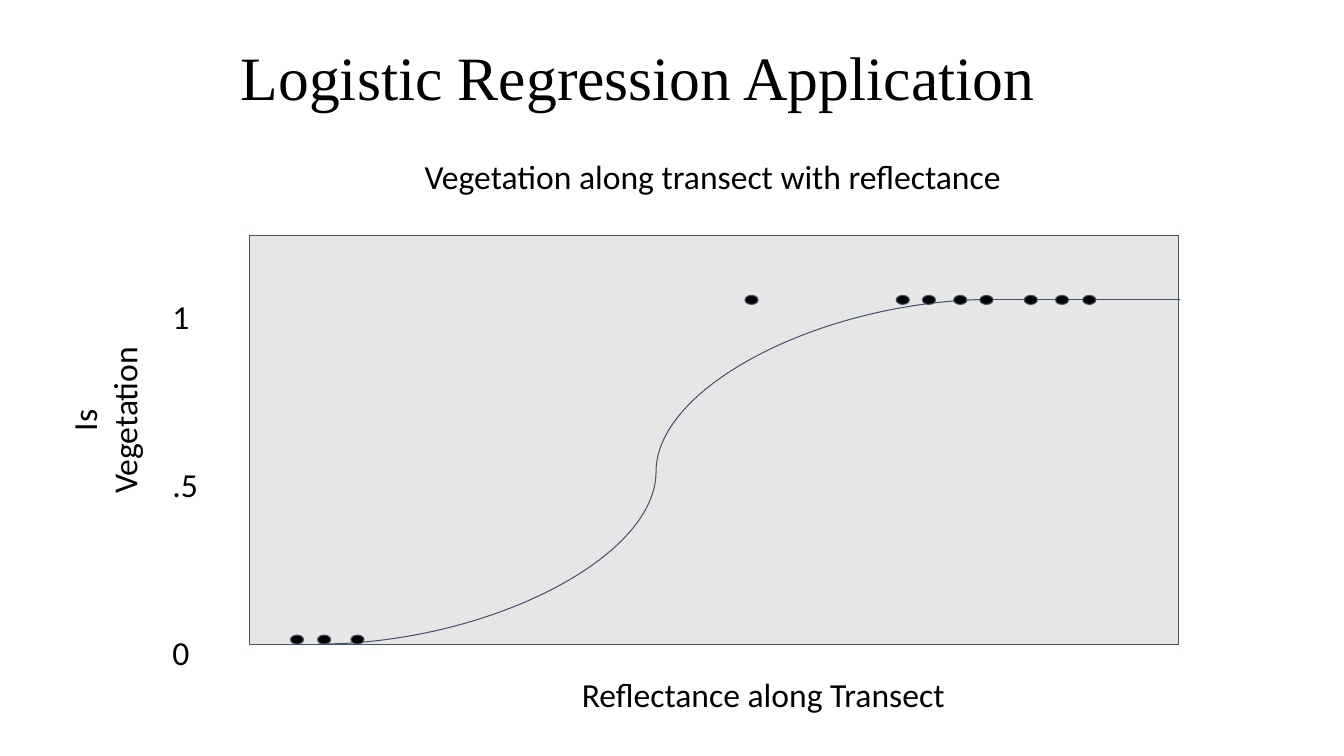
from dataclasses import dataclass

from lxml import etree
from pptx import Presentation
from pptx.dml.color import RGBColor
from pptx.enum.shapes import MSO_CONNECTOR, MSO_SHAPE
from pptx.enum.text import MSO_ANCHOR, MSO_AUTO_SIZE, PP_ALIGN
from pptx.oxml.ns import qn
from pptx.util import Inches, Pt

RECTANGLE, OVAL = MSO_SHAPE.RECTANGLE, MSO_SHAPE.OVAL
STRAIGHT, CURVE = MSO_CONNECTOR.STRAIGHT, MSO_CONNECTOR.CURVE
LEFT, CENTER = PP_ALIGN.LEFT, PP_ALIGN.CENTER
TOP = MSO_ANCHOR.TOP
GROW = MSO_AUTO_SIZE.SHAPE_TO_FIT_TEXT


@dataclass(frozen=True)
class Theme:
    ink: RGBColor = RGBColor(0x00, 0x00, 0x00)
    panel: RGBColor = RGBColor(0xE7, 0xE6, 0xE6)
    outline: RGBColor = RGBColor(0x44, 0x54, 0x6A)
    line_width: float = 0.75
    title_font: str = "Times New Roman"
    title_size: int = 44
    label_font: str = "Calibri"
    label_size: int = 24
    label_inset: float = 0.13


class SlideBuilder:
    """Draws on one slide; all positions are percentages of its size."""

    def __init__(self, deck, theme):
        self.width, self.height = deck.slide_width, deck.slide_height
        self.theme = theme
        self.shapes = deck.slides.add_slide(deck.slide_layouts[6]).shapes

    def across(self, percent):
        return round(self.width * percent / 100)

    def down(self, percent):
        return round(self.height * percent / 100)

    def box(self, left, top, width, height):
        return (self.across(left), self.down(top),
                self.across(width), self.down(height))

    def outline(self, line):
        line.color.rgb = self.theme.outline
        line.width = Pt(self.theme.line_width)

    def shape(self, kind, area, fill):
        drawn = self.shapes.add_shape(kind, *self.box(*area))
        drawn.shadow.inherit = False
        drawn.fill.solid()
        drawn.fill.fore_color.rgb = fill
        self.outline(drawn.line)

    def dot(self, x, y, width=0.98, height=1.2):
        self.shape(OVAL, (x - width / 2, y - height / 2, width, height),
                   self.theme.ink)

    def connector(self, kind, start, end):
        drawn = self.shapes.add_connector(
            kind, self.across(start[0]), self.down(start[1]),
            self.across(end[0]), self.down(end[1]))
        self.outline(drawn.line)
        etree.SubElement(drawn._element.spPr, qn("a:effectLst"))

    def text(self, wording, area, font, size, align):
        drawn = self.shapes.add_textbox(*self.box(*area))
        frame = drawn.text_frame
        frame.word_wrap = True
        frame.vertical_anchor = TOP
        frame.text = wording
        paragraph = frame.paragraphs[0]
        paragraph.alignment = align
        style = paragraph.runs[0].font
        style.name, style.size = font, Pt(size)
        style.color.rgb = self.theme.ink
        return drawn

    def title(self, wording, area):
        drawn = self.text(wording, area, self.theme.title_font,
                          self.theme.title_size, CENTER)
        drawn.text_frame.auto_size = GROW

    def label(self, wording, area, align=CENTER, rotation=0):
        drawn = self.text(wording, area, self.theme.label_font,
                          self.theme.label_size, align)
        drawn.rotation = rotation
        frame = drawn.text_frame
        frame.margin_left = frame.margin_right = Inches(self.theme.label_inset)
        frame.margin_top = frame.margin_bottom = Inches(self.theme.label_inset)


def main():
    deck = Presentation()
    deck.slide_width, deck.slide_height = Inches(13.33), Inches(7.5)
    theme = Theme()
    slide = SlideBuilder(deck, theme)

    # Plot panel
    slide.shape(RECTANGLE, (18.53, 31.2, 69.15, 54), theme.panel)

    # Logistic curve and its plateau
    zero_level, one_level = 85.2, 39.6
    curve_end = (74, one_level)
    slide.connector(CURVE, (23.63, zero_level), curve_end)
    slide.connector(STRAIGHT, curve_end, (87.8, one_level))

    # Observations: bare ground, then vegetation
    observations = {
        84.6: (22.1, 24.12, 26.6),
        39.67: (55.92, 67.17, 69.12, 71.45, 73.4, 76.7, 79.02, 81.05),
    }
    for level, reflectances in observations.items():
        for reflectance in reflectances:
            slide.dot(reflectance, level)

    # Axis titles
    slide.label("Reflectance along Transect", (40, 87.47, 33.6, 9.2))
    slide.label("Is Vegetation", (0.9, 48.13, 14.1, 14.93), rotation=270)

    # Vertical axis values
    first_tick, tick_step = 37.47, 22.2
    for row, (value, width) in enumerate((("1", 4.2), (".5", 5.78), ("0", 4.2))):
        slide.label(value, (11.85, first_tick + row * tick_step, width, 5.6),
                    align=LEFT)

    # Headings
    slide.label("Vegetation along transect with reflectance",
                (27, 18.93, 52.06, 11.2))
    slide.title("Logistic Regression Application ", (2.78, 4.53, 90.55, 11.2))

    deck.save("out.pptx")


if __name__ == "__main__":
    main()
